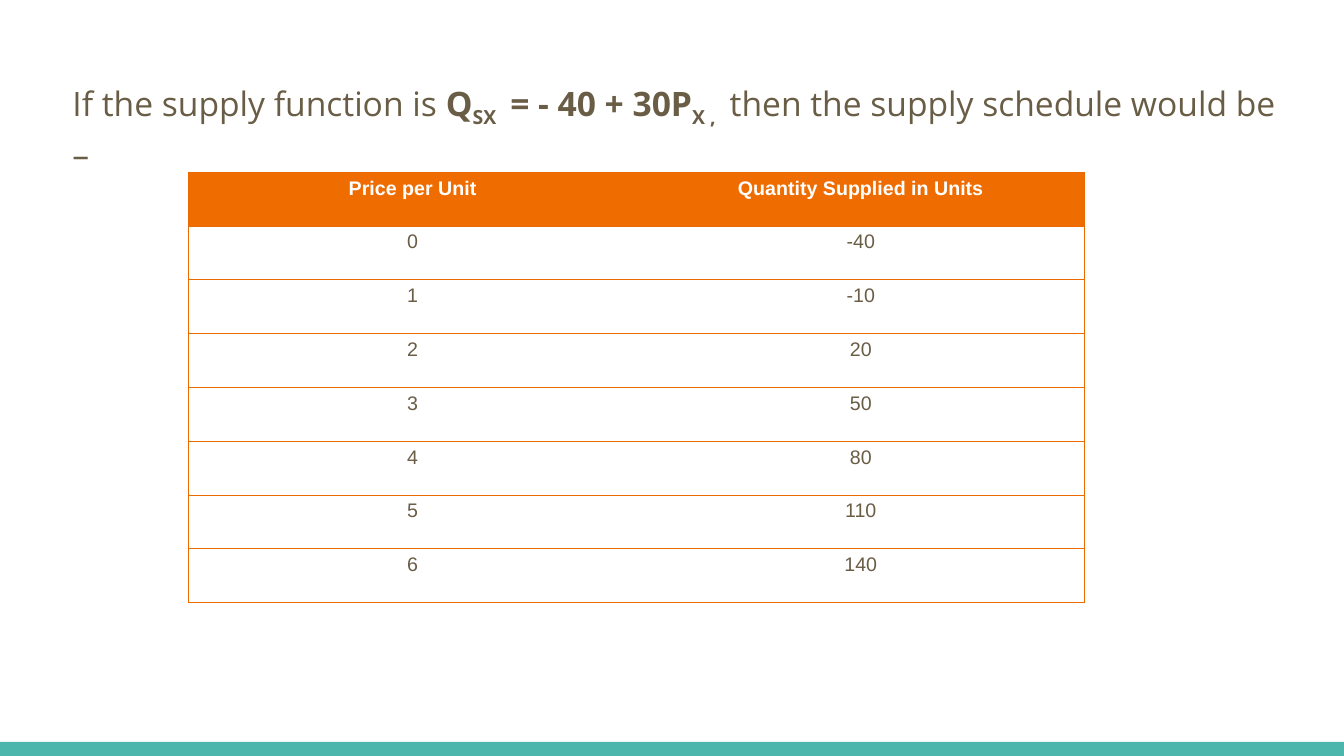
from dataclasses import dataclass

from lxml.etree import SubElement
from pptx import Presentation
from pptx.dml.color import RGBColor
from pptx.enum.shapes import MSO_SHAPE
from pptx.enum.text import PP_ALIGN
from pptx.oxml.ns import qn
from pptx.util import Inches, Pt


@dataclass(frozen=True)
class Theme:
    """Colours, fonts and type sizes of the slide."""
    text: str = "695D46"
    header_text: str = "FFFFFF"
    header_fill: str = "EF6C00"
    border: str = "EA6A00"
    footer: str = "4DB6AC"
    body_font: str = "Open Sans"
    table_font: str = "Arial"
    body_size: int = 24
    table_size: int = 14
    border_width: float = 0.75


THEME = Theme()

STATEMENT = [
    ("If the supply function is ", False, 0),
    ("Q", True, 0),
    ("SX ", True, -25),
    (" = - 40 + 30P", True, 0),
    ("X , ", True, -25),
    (" then the supply schedule would be –", False, 0),
]
HEADERS = ("Price per Unit", "Quantity Supplied in Units")
SCHEDULE = [(price, -40 + 30 * price) for price in range(7)]


def style_run(run, font_name, size, color, bold):
    """Give a run its font, size, colour and weight."""
    run.font.name = font_name
    run.font.size = Pt(size)
    run.font.color.rgb = RGBColor.from_string(color)
    run.font.bold = bold


def add_footer_band(slide, left, top, width, height):
    """Draw the coloured band along the bottom edge."""
    band = slide.shapes.add_shape(MSO_SHAPE.RECTANGLE, left, top, width, height)
    band.shadow.inherit = False
    band.fill.solid()
    band.fill.fore_color.rgb = RGBColor.from_string(THEME.footer)
    band.line.fill.background()


def add_statement(slide, left, top, width, height):
    """Write the supply function with its subscripts."""
    text_box = slide.shapes.add_textbox(left, top, width, height)
    text_frame = text_box.text_frame
    text_frame.word_wrap = True
    text_frame.margin_left = text_frame.margin_right = Inches(0.1)
    text_frame.margin_top = text_frame.margin_bottom = Inches(0.1)
    paragraph = text_frame.paragraphs[0]
    paragraph.line_spacing = 1.15
    properties = paragraph._p.get_or_add_pPr()
    properties.set("marL", str(Inches(0.17)))
    properties.set("indent", "0")
    for text, bold, baseline in STATEMENT:
        run = paragraph.add_run()
        run.text = text
        style_run(run, THEME.body_font, THEME.body_size, THEME.text, bold)
        if baseline:
            run._r.get_or_add_rPr().set("baseline", str(baseline * 1000))


def set_borders(cell, visible_sides):
    """Draw the visible cell sides and hide the others."""
    properties = cell._tc.get_or_add_tcPr()
    for position, side in enumerate("LRTB"):
        line = SubElement(properties, qn(f"a:ln{side}"), w=str(Pt(THEME.border_width)))
        if side in visible_sides:
            fill = SubElement(line, qn("a:solidFill"))
            SubElement(fill, qn("a:srgbClr"), val=THEME.border)
        else:
            SubElement(line, qn("a:noFill"))
        properties.insert(position, line)


def add_schedule_table(slide, left, top, width, height):
    """Place the supply schedule with a filled header row."""
    rows = [HEADERS, *SCHEDULE]
    frame = slide.shapes.add_table(len(rows), len(HEADERS), left, top, width, height)
    table = frame.table
    table.horz_banding = False
    for row_index, values in enumerate(rows):
        is_header = row_index == 0
        for column_index, value in enumerate(values):
            cell = table.cell(row_index, column_index)
            if is_header:
                cell.fill.solid()
                cell.fill.fore_color.rgb = RGBColor.from_string(THEME.header_fill)
            else:
                cell.fill.background()
            set_borders(cell, "LTB" if column_index == 0 else "RTB")
            paragraph = cell.text_frame.paragraphs[0]
            paragraph.text = str(value)
            paragraph.alignment = PP_ALIGN.CENTER
            color = THEME.header_text if is_header else THEME.text
            style_run(paragraph.runs[0], THEME.table_font, THEME.table_size, color, is_header)


def main():
    """Build the supply schedule slide and save it."""
    presentation = Presentation()
    presentation.slide_width = Inches(13.33)
    presentation.slide_height = Inches(7.5)
    slide = presentation.slides.add_slide(presentation.slide_layouts[6])
    add_footer_band(slide, 0, Inches(7.36), presentation.slide_width, Inches(0.14))
    add_statement(slide, Inches(0.45), Inches(0.65), Inches(12.42), Inches(6.01))
    add_schedule_table(slide, Inches(1.87), Inches(1.71), Inches(8.89), Inches(4.27))
    presentation.save("out.pptx")


if __name__ == "__main__":
    main()
